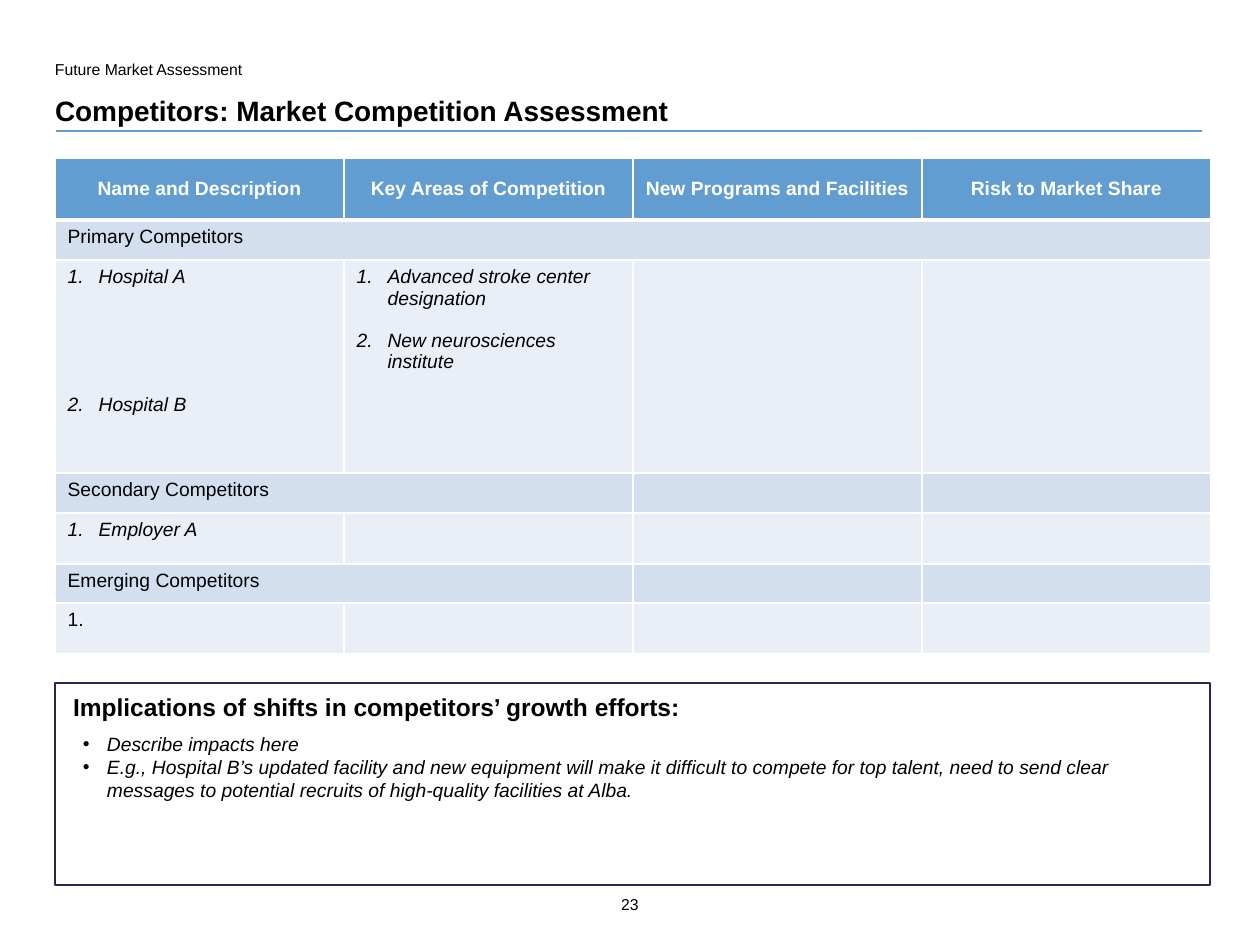
"""Build the market competition assessment slide."""
import pptx
import pptx.util
import pptx.dml.color
import pptx.enum.shapes
import pptx.enum.text
import pptx.oxml.ns
from lxml import etree

Pt = pptx.util.Pt
ALIGN = pptx.enum.text.PP_ALIGN
ANCHOR = pptx.enum.text.MSO_ANCHOR

THEME = {
    "font": "Arial", "text": "000000", "white": "FFFFFF", "rule": "5D9ACF",
    "header": "629DD1", "section": "D3DFEE", "entry": "EAEFF7", "frame": "242852",
    "small": 9, "body": 11, "heading": 14, "title": 16,
}
EYEBROW = "Future Market Assessment"
TITLE = "Competitors: Market Competition Assessment"
HEADERS = ["Name and Description", "Key Areas of Competition",
           "New Programs and Facilities", "Risk to Market Share"]
ROWS = [
    {"height": 40, "section": "Primary Competitors", "span": 4},
    {"height": 213, "entries": [["Hospital A", "Hospital B"],
                                ["Advanced stroke center designation",
                                 "New neurosciences institute"]], "gaps": [61, 12]},
    {"height": 40, "section": "Secondary Competitors", "span": 2},
    {"height": 51, "entries": [["Employer A"]], "gaps": [0]},
    {"height": 39, "section": "Emerging Competitors", "span": 2},
    {"height": 51, "label": "1."},
]
IMPLICATIONS_TITLE = "Implications of shifts in competitors’ growth efforts:"
IMPLICATIONS = [
    "Describe impacts here",
    "E.g., Hospital B’s updated facility and new equipment will make it difficult to compete "
    "for top talent, need to send clear messages to potential recruits of high-quality "
    "facilities at Alba.",
]
PAGE = "23"
HEADER_HEIGHT = 62
COLUMN_WIDTH = 289


def px(*lengths):
    return [round(length * 914400 / 126) for length in lengths]


def rgb(name):
    return pptx.dml.color.RGBColor.from_string(THEME[name])


def child(parent, tag, **attributes):
    return etree.SubElement(parent, pptx.oxml.ns.qn(tag), attributes)


def assign(target, values):
    for name, value in values.items():
        setattr(target, name, value)


def write(frame, lines, size="body", color="text", bold=False, italic=False,
          align=ALIGN.LEFT, bullet=None, indent=0, gap=0):
    for index, line in enumerate(lines):
        paragraph = frame.paragraphs[0] if index == 0 else frame.add_paragraph()
        assign(paragraph, {"alignment": align, "space_before": Pt(gap if index else 0)})
        if bullet:
            properties = paragraph._p.get_or_add_pPr()
            margin = px(indent)[0]
            properties.set("marL", str(margin))
            properties.set("indent", str(-margin))
            if bullet == "number":
                child(properties, "a:buAutoNum", type="arabicPeriod")
            else:
                child(properties, "a:buFont", typeface=THEME["font"])
                child(properties, "a:buChar", char=bullet)
        run = paragraph.add_run()
        run.text = line
        assign(run.font, {"name": THEME["font"], "size": Pt(THEME[size]),
                          "bold": bold, "italic": italic})
        run.font.color.rgb = rgb(color)


def set_frame(frame, insets, anchor=ANCHOR.TOP):
    left, top, right, bottom = px(*insets)
    assign(frame, {"margin_left": left, "margin_top": top, "margin_right": right,
                   "margin_bottom": bottom, "word_wrap": True, "vertical_anchor": anchor,
                   "auto_size": pptx.enum.text.MSO_AUTO_SIZE.NONE})


def add_text(slide, box, insets, lines, **style):
    frame = slide.shapes.add_textbox(*px(*box)).text_frame
    set_frame(frame, insets)
    write(frame, lines, **style)


def format_cell(cell, fill, bottom=1):
    cell.fill.solid()
    cell.fill.fore_color.rgb = rgb(fill)
    properties = cell._tc.get_or_add_tcPr()
    for index, (side, points) in enumerate(zip("LRTB", (1, 1, 1, bottom))):
        border = child(properties, f"a:ln{side}", w=str(Pt(points)))
        child(child(border, "a:solidFill"), "a:srgbClr", val=THEME["white"])
        properties.insert(index, border)
    if not cell.text:
        child(cell.text_frame.paragraphs[0]._p, "a:endParaRPr",
              sz=str(THEME["body"] * 100))


def fill_table(slide):
    heights = [HEADER_HEIGHT] + [row["height"] for row in ROWS]
    box = px(55, 158, COLUMN_WIDTH * len(HEADERS), sum(heights))
    table = slide.shapes.add_table(len(heights), len(HEADERS), *box).table
    table.horz_banding = False
    for column in table.columns:
        column.width = px(COLUMN_WIDTH)[0]
    for table_row, height in zip(table.rows, heights):
        table_row.height = px(height)[0]
    for column, header in enumerate(HEADERS):
        cell = table.cell(0, column)
        cell.vertical_anchor = ANCHOR.MIDDLE
        write(cell.text_frame, [header], color="white", bold=True, align=ALIGN.CENTER)
        format_cell(cell, "header", bottom=3)
    for number, row in enumerate(ROWS, 1):
        first = table.cell(number, 0)
        if "section" in row:
            first.merge(table.cell(number, row["span"] - 1))
        label = row.get("section", row.get("label"))
        if label:
            write(first.text_frame, [label])
        for column, entries in enumerate(row.get("entries", [])):
            write(table.cell(number, column).text_frame, entries, italic=True,
                  bullet="number", indent=31, gap=row["gaps"][column])
        for column in range(len(HEADERS)):
            format_cell(table.cell(number, column), "section" if "section" in row else "entry")


def main():
    deck = pptx.Presentation()
    assign(deck, dict(zip(("slide_width", "slide_height"), px(1260, 945))))
    slide = deck.slides.add_slide(deck.slide_layouts[5])

    title = slide.shapes.title
    assign(title, dict(zip(("left", "top", "width", "height"), px(55, 93, 1146, 34))))
    set_frame(title.text_frame, (0, 0, 0, 0), ANCHOR.BOTTOM)
    write(title.text_frame, [TITLE], size="title", bold=True)
    add_text(slide, (55, 55, 364, 25), (0, 5, 0, 5), [EYEBROW], size="small")

    rule = slide.shapes.add_connector(pptx.enum.shapes.MSO_CONNECTOR.STRAIGHT,
                                      *px(56, 131, 1202, 131))
    rule.line.color.rgb = rgb("rule")
    rule.line.width = Pt(0.75)
    child(rule._element.spPr, "a:effectLst")

    fill_table(slide)

    frame = slide.shapes.add_shape(pptx.enum.shapes.MSO_SHAPE.RECTANGLE,
                                   *px(55, 683, 1155, 202))
    frame.shadow.inherit = False
    frame.fill.background()
    frame.line.color.rgb = rgb("frame")
    frame.line.width = Pt(1)
    add_text(slide, (55, 683, 1066, 48), (18, 9, 18, 9), [IMPLICATIONS_TITLE],
             size="heading", bold=True)
    add_text(slide, (77, 726, 1096, 134), (6, 6, 6, 6), IMPLICATIONS,
             italic=True, bullet="•", indent=24)
    add_text(slide, (587, 890, 86, 33), (5, 5, 5, 5), [PAGE], size="small",
             align=ALIGN.CENTER)
    deck.save("out.pptx")


if __name__ == "__main__":
    main()
